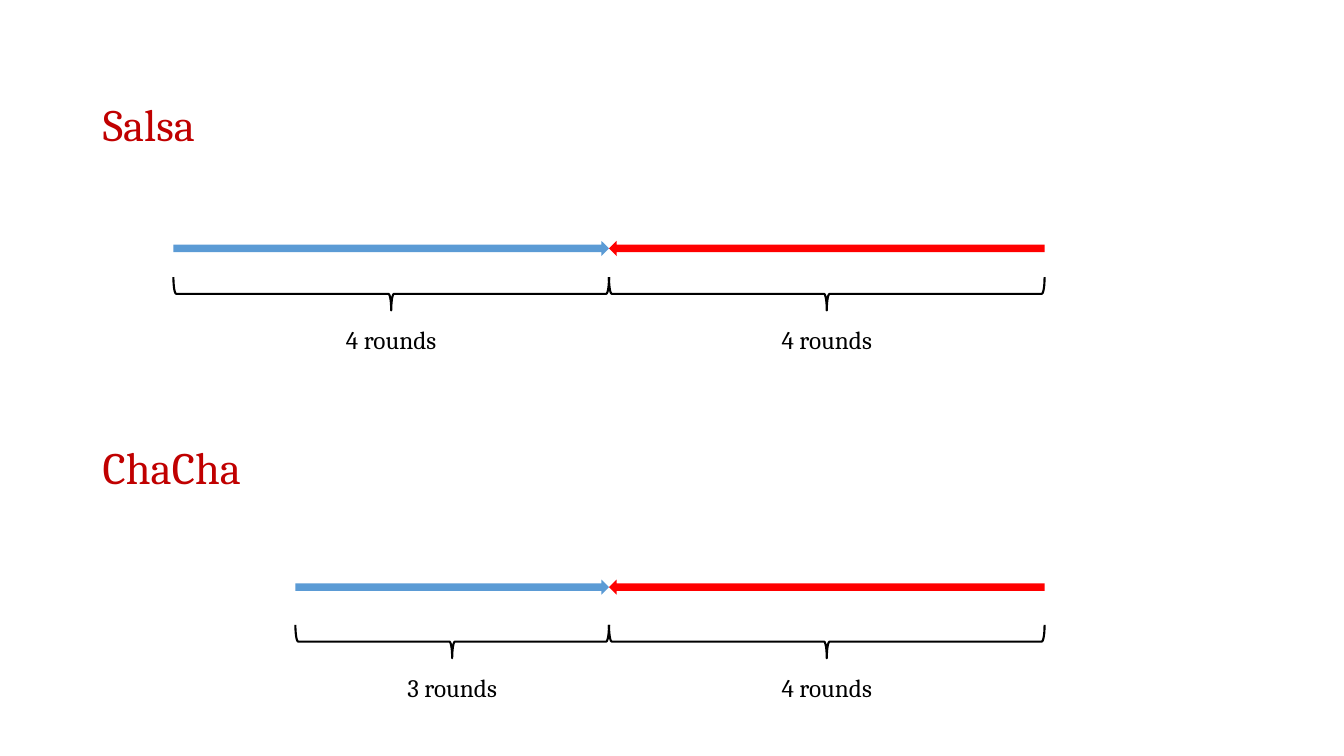
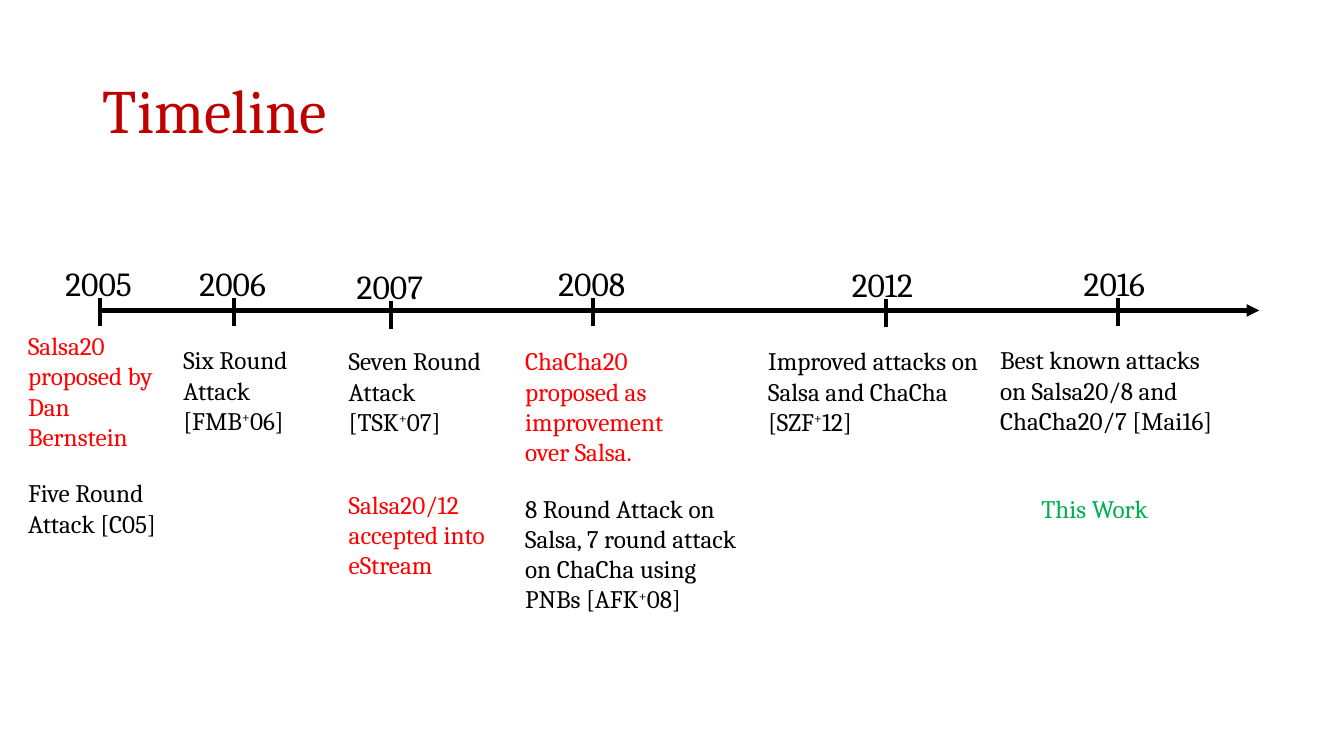
import pptx
import pptx.dml.color
import pptx.enum.dml
import pptx.enum.shapes
import pptx.enum.text
import pptx.oxml
import pptx.oxml.ns
import pptx.util
from pptx.util import Inches, Pt

RGBColor = pptx.dml.color.RGBColor
Shape = pptx.enum.shapes.MSO_SHAPE
Align = pptx.enum.text.PP_ALIGN
Anchor = pptx.enum.text.MSO_ANCHOR
AutoSize = pptx.enum.text.MSO_AUTO_SIZE

HEADING_RED = RGBColor(0xC0, 0x00, 0x00)
RED = RGBColor(0xFF, 0x00, 0x00)
BLUE = RGBColor(0x5B, 0x9B, 0xD5)
GREEN = RGBColor(0x00, 0xB0, 0x50)
BLACK = RGBColor(0x00, 0x00, 0x00)
FONT = "Cambria"
TITLE_ONLY = 5
HEADING_LEFT = 0.92
HEADING_WIDTH = 11.5

EVENTS = [
    ("2005", 0.99, 2.96, [
        (0.18, 3.23, 1.51, 1.31, RED, "Salsa20 proposed by Dan Bernstein"),
        (0.18, 4.69, 1.51, 0.71, BLACK, "Five Round Attack [C05]")]),
    ("2006", 2.32, 2.96, [
        (1.72, 3.37, 1.51, 1.01, BLACK, "Six Round Attack [FMB^+^06]")]),
    ("2007", 3.88, 2.99, [
        (3.36, 3.38, 1.62, 1.01, BLACK, "Seven Round Attack [TSK^+^07]"),
        (3.36, 4.8, 1.62, 1.01, RED, "Salsa20/12 accepted into eStream")]),
    ("2008", 5.88, 2.96, [
        (5.11, 3.38, 2, 1.31, RED, "ChaCha20 proposed as improvement over Salsa."),
        (5.11, 4.84, 2.41, 1.31, BLACK,
         "8 Round Attack on Salsa, 7 round attack on ChaCha using PNBs [AFK^+^08]")]),
    ("2012", 8.79, 2.97, [
        (7.52, 3.38, 2.41, 1.01, BLACK,
         "Improved attacks on Salsa and ChaCha [SZF^+^12]")]),
    ("2016", 11.09, 2.96, [
        (9.82, 3.37, 2.41, 1.01, BLACK,
         "Best known attacks on Salsa20/8 and ChaCha20/7 [Mai16]"),
        (10.23, 4.84, 2.41, 0.4, GREEN, "This Work")]),
]


def write_text(box, text, size, color, align=Align.LEFT):
    para = box.text_frame.paragraphs[0]
    para.alignment = align
    for index, part in enumerate(text.split("^")):
        span = para.add_run()
        span.text = part
        span.font.name = FONT
        span.font.size = Pt(size)
        span.font.color.rgb = color
        if index % 2:
            span.font._element.set("baseline", "30000")
    return para


def add_label(slide, left, top, width, height, text, size=18, color=BLACK, align=Align.LEFT):
    box = slide.shapes.add_textbox(Inches(left), Inches(top), Inches(width), Inches(height))
    box.text_frame.word_wrap = True
    write_text(box, text, size, color, align)
    return box


def format_heading(box, top, height, text, size):
    box.left, box.top = Inches(HEADING_LEFT), Inches(top)
    box.width, box.height = Inches(HEADING_WIDTH), Inches(height)
    frame = box.text_frame
    frame.word_wrap = True
    frame.auto_size = AutoSize.NONE
    frame.vertical_anchor = Anchor.MIDDLE
    write_text(box, text, size, HEADING_RED).line_spacing = 0.9


def add_titled_slide(deck, top, height, text, size):
    slide = deck.slides.add_slide(deck.slide_layouts[TITLE_ONLY])
    format_heading(slide.shapes.title, top, height, text, size)
    return slide


def add_line(slide, start, end, arrow=False):
    line = slide.shapes.add_connector(
        pptx.enum.shapes.MSO_CONNECTOR.STRAIGHT,
        *(Inches(value) for value in start + end))
    line.line.color.rgb = BLACK
    line.line.width = Pt(3)
    if arrow:
        tail = pptx.oxml.parse_xml(
            f'<a:tailEnd {pptx.oxml.ns.nsdecls("a")} type="triangle"/>')
        line.line._get_or_add_ln().append(tail)
    line._element.spPr.append(
        pptx.oxml.parse_xml(f'<a:effectLst {pptx.oxml.ns.nsdecls("a")}/>'))


def add_rounds(slide, left, width, arrow_top, brace_top, color, arrow_shape, text):
    arrow = slide.shapes.add_shape(
        arrow_shape, Inches(left), Inches(arrow_top), Inches(width), Inches(0.15))
    arrow.shadow.inherit = False
    arrow.fill.solid()
    arrow.fill.fore_color.rgb = color
    arrow.line.fill.background()

    depth = 0.33
    center = left + width / 2
    brace = slide.shapes.add_shape(
        Shape.LEFT_BRACE, Inches(center - depth / 2),
        Inches(brace_top + depth / 2 - width / 2), Inches(depth), Inches(width))
    brace.rotation = 270
    brace.shadow.inherit = False
    brace.fill.background()
    brace.line.color.rgb = BLACK
    brace.line.width = Pt(1.5)

    add_label(slide, center - 0.6, brace_top + 0.42, 1.2, 0.4, text, align=Align.CENTER)


def add_attack(slide, arrow_top, brace_top, forward_width, forward_text):
    meeting, backward_width = 6.04, 4.32
    add_rounds(slide, meeting - forward_width, forward_width, arrow_top, brace_top,
               BLUE, Shape.RIGHT_ARROW, forward_text)
    add_rounds(slide, meeting, backward_width, arrow_top, brace_top,
               RED, Shape.LEFT_ARROW, "4 rounds")


def build_rounds_slide(deck):
    slide = add_titled_slide(deck, 0.67, 1.18, "Salsa", 32)
    add_attack(slide, 2.39, 2.75, 4.32, "4 rounds")
    heading = slide.shapes.add_textbox(0, 0, 0, 0)
    format_heading(heading, 4.07, 1.18, "ChaCha", 32)
    add_attack(slide, 5.75, 6.2, 3.11, "3 rounds")


def add_event(slide, year, center, tick_top, notes):
    add_line(slide, (center, tick_top), (center, tick_top + 0.27))
    add_label(slide, center - 0.44, tick_top - 0.4, 1.3, 0.5, year, size=24)
    for left, top, width, height, color, text in notes:
        add_label(slide, left, top, width, height, text, color=color)


def build_timeline_slide(deck):
    slide = add_titled_slide(deck, 0.4, 1.45, "Timeline", 44)
    add_line(slide, (0.99, 3.08), (12.49, 3.08), arrow=True)
    for event in EVENTS:
        add_event(slide, *event)


def main():
    deck = pptx.Presentation()
    deck.slide_width, deck.slide_height = Inches(13.33), Inches(7.5)
    build_rounds_slide(deck)
    build_timeline_slide(deck)
    deck.save("out.pptx")


if __name__ == "__main__":
    main()
